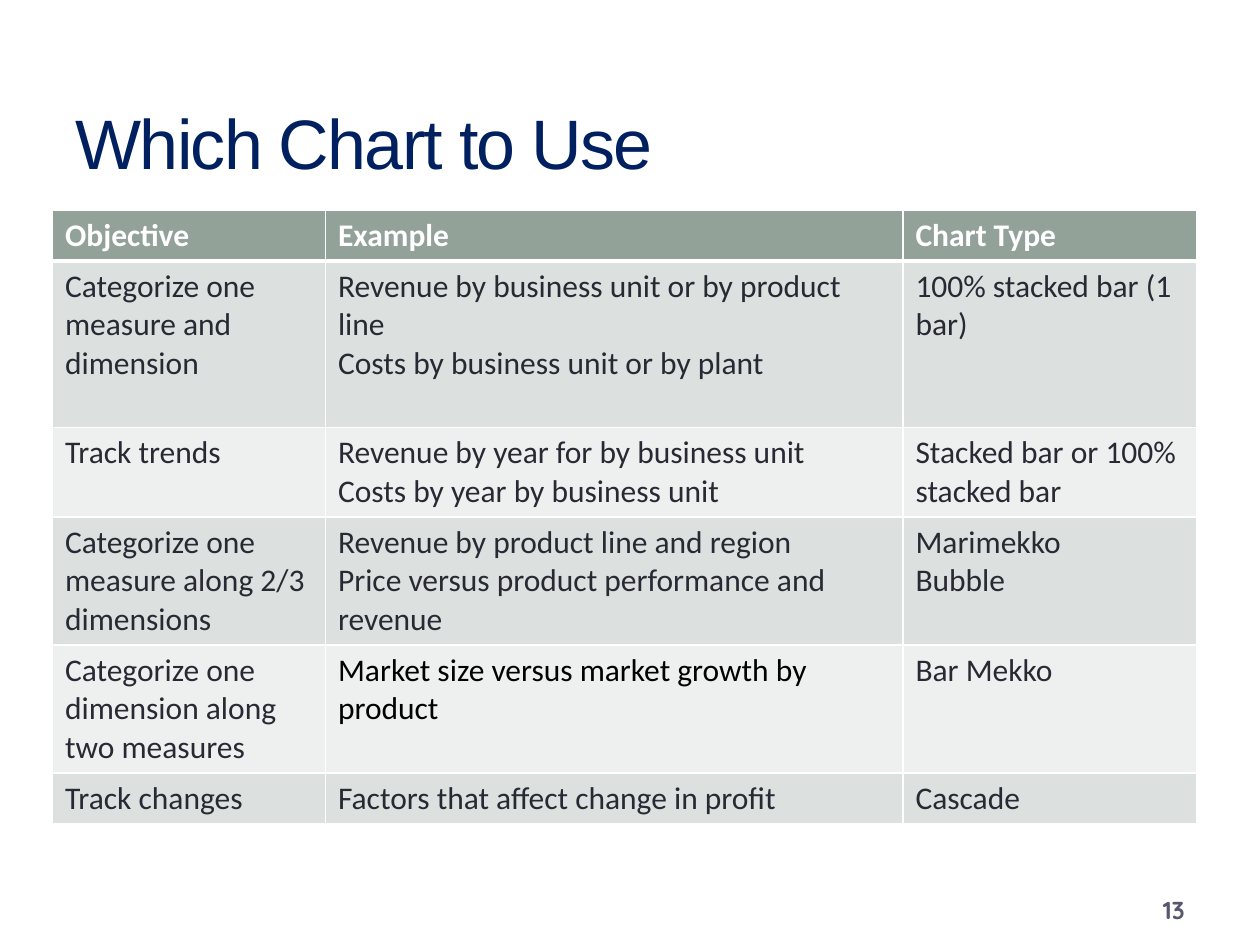
from dataclasses import dataclass

from lxml.etree import SubElement
from pptx import Presentation
from pptx.dml.color import RGBColor
from pptx.enum.text import MSO_ANCHOR, MSO_AUTO_SIZE, PP_ALIGN
from pptx.oxml.ns import qn
from pptx.slide import Slide
from pptx.util import Pt

COLUMN_WIDTHS = [156, 330, 168]
ROW_HEIGHTS = [29.2, 95.2, 51.1, 73.1, 73.1, 29.2]
# Each cell is a list of paragraphs
CHART_GUIDE = [
    [["Objective"], ["Example"], ["Chart Type"]],
    [["Categorize one measure and dimension"],
     ["Revenue by business unit or by product line",
      "Costs by business unit or by plant"],
     ["100% stacked bar (1 bar)"]],
    [["Track trends"],
     ["Revenue by year for by business unit",
      "Costs by year by business unit"],
     ["Stacked bar or 100% stacked bar"]],
    [["Categorize one measure along 2/3 dimensions"],
     ["Revenue by product line and region",
      "Price versus product performance and revenue"],
     ["Marimekko", "Bubble"]],
    [["Categorize one dimension along two measures"],
     ["Market size versus market growth by product"],
     ["Bar Mekko"]],
    [["Track changes"],
     ["Factors that affect change in profit"],
     ["Cascade"]],
]
BLACK_TEXT_CELL = (4, 1)


def rgb(hex_color):
    return RGBColor.from_string(hex_color)


@dataclass
class SlideBuilder:
    slide: Slide
    title_font: str = "Arial"
    body_font: str = "Calibri"
    number_font: str = "Quicksand"
    title_color: str = "002060"
    text_color: str = "292934"
    number_color: str = "57576E"
    header_fill: str = "93A299"
    band_fills: tuple = ("EEF0EF", "DCE0DE")
    border_color: str = "FFFFFF"

    def add_run(self, paragraph, text, font, size, color, bold=False):
        run = paragraph.add_run()
        run.text = text
        run.font.name = font
        run.font.size = Pt(size)
        run.font.bold = bold
        run.font.color.rgb = rgb(color)
        return run

    def title(self, text, left, top, width, height):
        heading = self.slide.shapes.title
        heading.left, heading.top = Pt(left), Pt(top)
        heading.width, heading.height = Pt(width), Pt(height)
        frame = heading.text_frame
        frame.auto_size = MSO_AUTO_SIZE.NONE
        frame.vertical_anchor = MSO_ANCHOR.MIDDLE
        paragraph = frame.paragraphs[0]
        paragraph.alignment = PP_ALIGN.LEFT
        run = self.add_run(paragraph, text, self.title_font, 40, self.title_color)
        run.font._element.set("spc", "-100")

    def page_number(self, text, left, top, width, height):
        frame = self.slide.shapes.add_textbox(
            Pt(left), Pt(top), Pt(width), Pt(height)).text_frame
        frame.word_wrap = True
        frame.vertical_anchor = MSO_ANCHOR.MIDDLE
        paragraph = frame.paragraphs[0]
        paragraph.alignment = PP_ALIGN.RIGHT
        self.add_run(paragraph, text, self.number_font, 14, self.number_color, True)

    def cell_borders(self, cell, top, bottom):
        properties = cell._tc.get_or_add_tcPr()
        for side, width in (("L", 1), ("R", 1), ("T", top), ("B", bottom)):
            line = SubElement(properties, qn(f"a:ln{side}"), w=str(Pt(width)))
            fill = SubElement(line, qn("a:solidFill"))
            SubElement(fill, qn("a:srgbClr"), val=self.border_color)

    def cell(self, cell, paragraphs, row, color):
        is_header = row == 0
        self.cell_borders(cell, top=3 if row == 1 else 1, bottom=3 if is_header else 1)
        cell.fill.solid()
        cell.fill.fore_color.rgb = rgb(
            self.header_fill if is_header else self.band_fills[row % 2])
        frame = cell.text_frame
        for index, text in enumerate(paragraphs):
            paragraph = frame.add_paragraph() if index else frame.paragraphs[0]
            self.add_run(paragraph, text, self.body_font, 18, color, is_header)

    def table(self, rows, left, top, widths, heights):
        table = self.slide.shapes.add_table(
            len(rows), len(widths), Pt(left), Pt(top),
            Pt(sum(widths)), Pt(sum(heights))).table
        for column, width in zip(table.columns, widths):
            column.width = Pt(width)
        for row, (cells, height) in enumerate(zip(rows, heights)):
            table.rows[row].height = Pt(height)
            for column, paragraphs in enumerate(cells):
                if row == 0:
                    color = "FFFFFF"
                elif (row, column) == BLACK_TEXT_CELL:
                    color = "000000"
                else:
                    color = self.text_color
                self.cell(table.cell(row, column), paragraphs, row, color)


def main():
    presentation = Presentation()
    presentation.slide_width, presentation.slide_height = Pt(720), Pt(540)
    title_only = presentation.slide_layouts[5]
    builder = SlideBuilder(presentation.slides.add_slide(title_only))
    builder.title("Which Chart to Use", 36, 42, 648, 78)
    builder.page_number("13", 516, 510, 168, 19.5)
    builder.table(CHART_GUIDE, 30, 120, COLUMN_WIDTHS, ROW_HEIGHTS)
    presentation.save("out.pptx")


if __name__ == "__main__":
    main()
